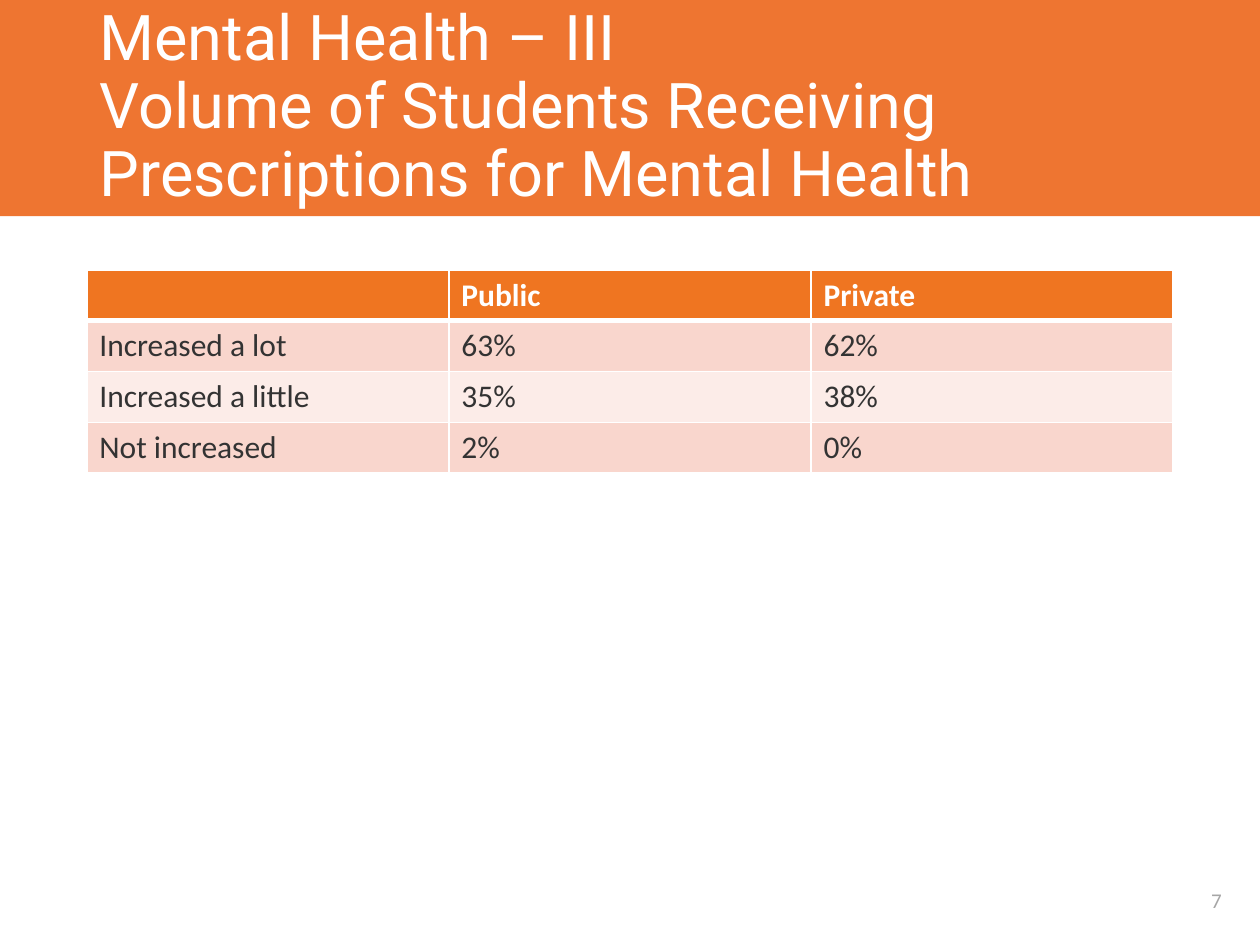
from lxml.etree import SubElement
from pptx import Presentation
from pptx.dml.color import RGBColor
from pptx.enum.shapes import MSO_SHAPE
from pptx.enum.text import MSO_ANCHOR, PP_ALIGN
from pptx.oxml.ns import qn
from pptx.util import Cm, Pt

WHITE = "FFFFFF"
BANNER_ORANGE = "EE7531"
HEADER_ORANGE = "EF7521"
BAND_FILLS = ("F9D6CD", "FCECE8")
TEXT_GREY = "333333"
NUMBER_GREY = "A6A6A6"

ROWS = (
    ("", "Public", "Private"),
    ("Increased a lot", "63%", "62%"),
    ("Increased a little", "35%", "38%"),
    ("Not increased", "2%", "0%"),
)


def paint(color_holder, color):
    """Fill a shape or a cell with a solid colour."""
    color_holder.fill.solid()
    color_holder.fill.fore_color.rgb = RGBColor.from_string(color)


def add_run(paragraph, text, font_name, size, color, bold=False):
    """Add one formatted run to a paragraph."""
    run = paragraph.add_run()
    run.text = text
    run.font.name = font_name
    run.font.size = Pt(size)
    run.font.bold = bold
    run.font.color.rgb = RGBColor.from_string(color)


def add_text_box(slide, left, top, width, height):
    """Add a wrapping, vertically centred text box and return its paragraph."""
    shape = slide.shapes.add_textbox(Cm(left), Cm(top), Cm(width), Cm(height))
    shape.text_frame.word_wrap = True
    shape.text_frame.vertical_anchor = MSO_ANCHOR.MIDDLE
    return shape.text_frame.paragraphs[0]


def set_border(cell, side, width):
    """Draw a white line on one side of a cell."""
    properties = cell._tc.get_or_add_tcPr()
    line = SubElement(properties, qn(f"a:ln{side}"), w=str(Pt(width)))
    fill = SubElement(line, qn("a:solidFill"))
    SubElement(fill, qn("a:srgbClr"), val=WHITE)


def add_banner(slide, left, top, width, height):
    """Draw the coloured banner with the title inside it."""
    banner = slide.shapes.add_shape(
        MSO_SHAPE.RECTANGLE, Cm(left), Cm(top), Cm(width), Cm(height))
    banner.shadow.inherit = False
    paint(banner, BANNER_ORANGE)
    banner.line.fill.background()

    margin = 1.76
    paragraph = add_text_box(slide, left + margin, top, width - 2 * margin, height)
    paragraph.line_spacing = 0.9
    add_run(paragraph, "Mental Health – III", "Roboto", 36, WHITE)
    paragraph.add_line_break()
    add_run(paragraph,
            "Volume of Students Receiving Prescriptions for Mental Health",
            "Roboto", 36, WHITE)


def add_results_table(slide, left, top, width, height):
    """Add the banded table of survey answers."""
    table = slide.shapes.add_table(
        len(ROWS), len(ROWS[0]), Cm(left), Cm(top), Cm(width), Cm(height)).table
    for row_index, row in enumerate(ROWS):
        is_header = row_index == 0
        fill = HEADER_ORANGE if is_header else BAND_FILLS[(row_index - 1) % 2]
        widths = {"L": 1, "R": 1,
                  "T": 3 if row_index == 1 else 1,
                  "B": 3 if is_header else 1}
        for column_index, text in enumerate(row):
            cell = table.cell(row_index, column_index)
            for side, line_width in widths.items():
                set_border(cell, side, line_width)
            paint(cell, fill)
            if text:
                add_run(cell.text_frame.paragraphs[0], text, "Calibri", 18,
                        WHITE if is_header else TEXT_GREY, is_header)


def add_slide_number(slide, left, top, width, height):
    """Place the slide number in the given box."""
    paragraph = add_text_box(slide, left, top, width, height)
    paragraph.alignment = PP_ALIGN.CENTER
    add_run(paragraph, "7", "Calibri", 12, NUMBER_GREY)


def main():
    """Build the slide and save it."""
    presentation = Presentation()
    presentation.slide_width = Cm(25.4)
    presentation.slide_height = Cm(19.05)
    slide = presentation.slides.add_slide(presentation.slide_layouts[6])
    add_banner(slide, 0, 0, 25.4, 4.36)
    add_results_table(slide, 1.75, 5.44, 21.9, 4.1)
    add_slide_number(slide, 23.65, 17.65, 1.75, 1)
    presentation.save("out.pptx")


if __name__ == "__main__":
    main()
